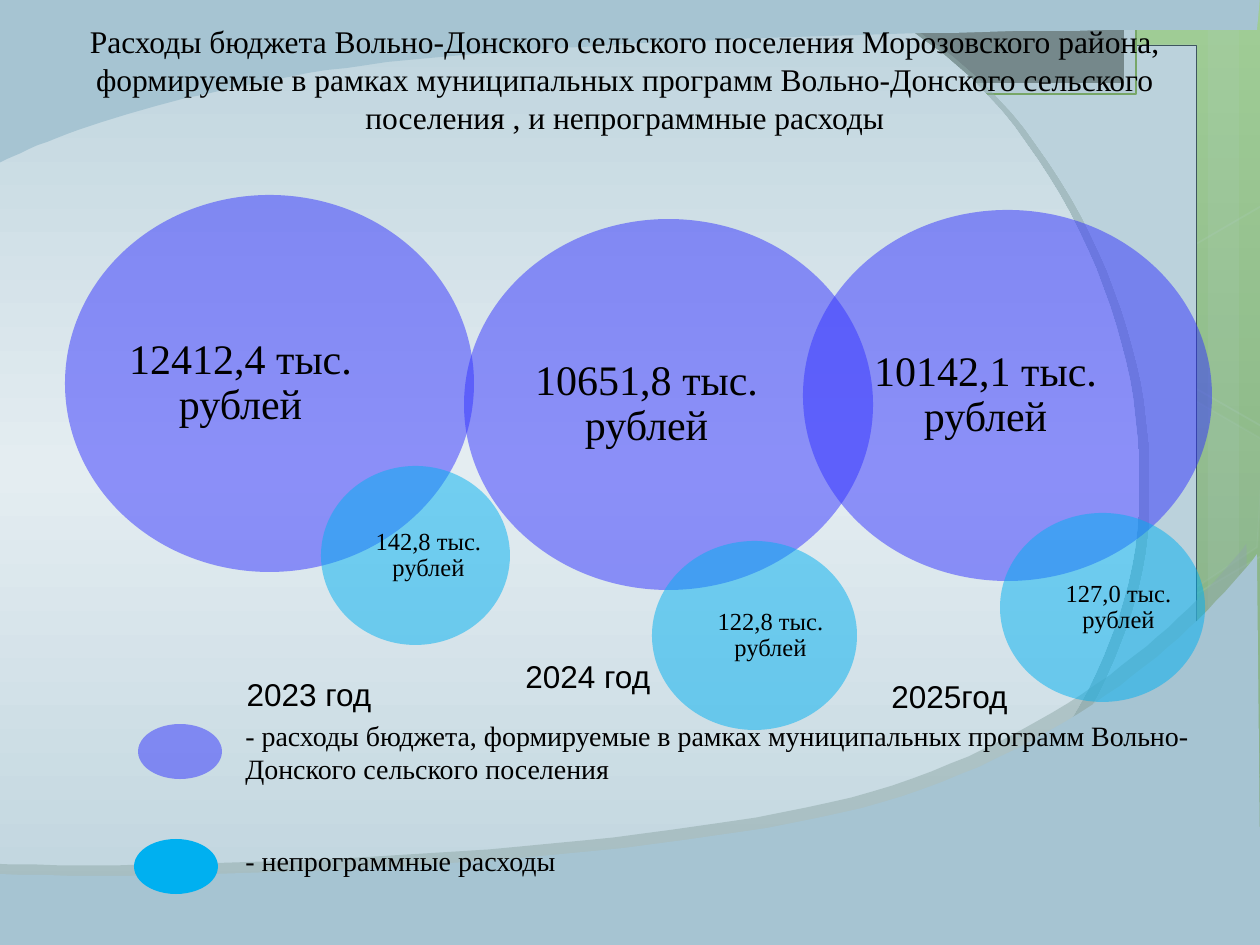
"""Build the slide on programme and non-programme budget spending by year."""
from dataclasses import dataclass
from typing import Optional

from lxml import etree
from pptx import Presentation
from pptx.dml.color import RGBColor
from pptx.enum.shapes import MSO_SHAPE
from pptx.enum.text import MSO_ANCHOR, PP_ALIGN
from pptx.oxml.ns import qn
from pptx.util import Emu, Pt

SCALE = 914400 / 126
WIDTH, HEIGHT = 1260, 945
RECT, OVAL, HEXAGON = MSO_SHAPE.RECTANGLE, MSO_SHAPE.OVAL, MSO_SHAPE.HEXAGON
LEFT, CENTER = PP_ALIGN.LEFT, PP_ALIGN.CENTER
TOP, MIDDLE = MSO_ANCHOR.TOP, MSO_ANCHOR.MIDDLE
SERIF, SANS = "Times New Roman", "Arial"
PROGRAMME, OTHER, BAND = "3333FF", "00B0F0", "A6C4D2"


@dataclass
class Paint:
    fill: Optional[str] = None
    alpha: int = 100
    line: Optional[str] = None
    line_width: float = 1
    line_alpha: int = 100


@dataclass
class Box:
    x: int
    y: int
    w: int
    h: int


@dataclass
class Bubble:
    box: Box
    color: str
    text: str = ""
    size: int = 24
    shift: int = 0
    alpha: int = 50


@dataclass
class Label:
    box: Box
    text: str
    size: int = 18
    font: str = SERIF
    align: PP_ALIGN = LEFT


def px(n: float) -> Emu:
    return Emu(round(n * SCALE))


def rgb(color: str) -> RGBColor:
    return RGBColor.from_string(color)


def set_alpha(parent, percent: int) -> None:
    if percent < 100:
        color = parent.find(qn("a:solidFill"))[0]
        etree.SubElement(color, qn("a:alpha"), val=str(percent * 1000))


def paint(sp, style: Paint) -> None:
    sp.shadow.inherit = False
    if style.fill:
        sp.fill.solid()
        sp.fill.fore_color.rgb = rgb(style.fill)
        set_alpha(sp._element.spPr, style.alpha)
    else:
        sp.fill.background()
    if style.line:
        sp.line.color.rgb = rgb(style.line)
        sp.line.width = Pt(style.line_width)
        set_alpha(sp._element.spPr.find(qn("a:ln")), style.line_alpha)
    else:
        sp.line.fill.background()


def set_gradient(fill, element, stops: list) -> None:
    fill.gradient()
    fill.gradient_angle = 270
    gs_list = next(element.iter(qn("a:gsLst")))
    for gs in list(gs_list):
        gs_list.remove(gs)
    for position, color in stops:
        gs = etree.SubElement(gs_list, qn("a:gs"), pos=str(position * 1000))
        etree.SubElement(gs, qn("a:srgbClr"), val=color)


def add_shadow(sp, distance: float, angle: int) -> None:
    effects = sp._element.spPr.find(qn("a:effectLst"))
    shadow = etree.SubElement(effects, qn("a:outerShdw"), blurRad="0", dist=str(Pt(distance)),
                              dir=str(angle * 60000), algn="ctr", rotWithShape="0")
    color = etree.SubElement(shadow, qn("a:srgbClr"), val="8EA8A7")
    etree.SubElement(color, qn("a:alpha"), val="50000")


def add_preset(s, kind: MSO_SHAPE, box: Box, style: Paint):
    sp = s.shapes.add_shape(kind, px(box.x), px(box.y), px(box.w), px(box.h))
    paint(sp, style)
    return sp


def add_outline(s, points: list, style: Paint):
    builder = s.shapes.build_freeform(*points[0], scale=SCALE)
    builder.add_line_segments(points[1:], close=True)
    sp = builder.convert_to_shape()
    paint(sp, style)
    return sp


def curve(points: list, steps: int = 30) -> list:
    """Sample a chain of cubic Bézier segments."""
    sampled = [points[0]]
    for i in range(0, len(points) - 1, 3):
        a, b, c, d = points[i:i + 4]
        for t in (n / steps for n in range(1, steps + 1)):
            u = 1 - t
            sampled.append(tuple(u**3 * a[k] + 3 * u * u * t * b[k] + 3 * u * t * t * c[k]
                                 + t**3 * d[k] for k in (0, 1)))
    return sampled


def write(sp, text: str, size: int, font: str, align: PP_ALIGN, anchor: MSO_ANCHOR) -> None:
    tf = sp.text_frame
    tf.word_wrap = True
    tf.vertical_anchor = anchor
    p = tf.paragraphs[0]
    p.text = text
    p.alignment = align
    r = p.runs[0]
    r.font.size = Pt(size)
    r.font.name = font
    r.font.color.rgb = rgb("000000")


def add_bubble(s, bubble: Bubble) -> None:
    sp = add_preset(s, OVAL, bubble.box, Paint(bubble.color, bubble.alpha))
    if bubble.text:
        write(sp, bubble.text, bubble.size, SERIF, CENTER, MIDDLE)
        tf = sp.text_frame
        tf.margin_left, tf.margin_right = px(bubble.shift), px(-bubble.shift)
        tf.margin_top = tf.margin_bottom = 0
        tf.paragraphs[0].line_spacing = 0.9


def add_label(s, label: Label) -> None:
    b = label.box
    sp = s.shapes.add_textbox(px(b.x), px(b.y), px(b.w), px(b.h))
    write(sp, label.text, label.size, label.font, label.align, TOP)


def draw_backdrop(s) -> None:
    set_gradient(s.background.fill, s._element, [(0, "C2F35F"), (62, "92BE3F"), (100, "80A33D")])
    for x, w in ((1208, 52), (1134, 105)):
        add_preset(s, RECT, Box(x, 0, w, HEIGHT), Paint("FFFFFF", 10))
    sp = add_preset(s, HEXAGON, Box(1051, 396, 221, 192), Paint("FFFFFF", 7, "FFFFFF", 1, 8))
    sp.rotation = 30
    cut_hexagon = [(1167, 261), (1263, 205), (1273, 212), (1271, 422), (1263, 427), (1167, 372)]
    for dy, fill in ((0, None), (350, "FFFFFF")):
        add_outline(s, [(x, y + dy) for x, y in cut_hexagon], Paint(fill, 4, "FFFFFF", 1, 12))
    add_preset(s, RECT, Box(63, 45, 1134, 853), Paint("FFFFFF", line="000000", line_width=0.5))
    add_preset(s, RECT, Box(629, -3, 507, 97), Paint("F5F5F5", line="74A510", line_width=1.25))
    add_preset(s, RECT, Box(641, -3, 483, 86), Paint("71685A"))
    add_preset(s, RECT, Box(0, 0, WIDTH, HEIGHT), Paint("7AA8BC", 51))

    pale = curve([(854, 0), (1045, 81), (1144, 326), (1139, 483),
                  (1147, 641), (1018, 864), (828, 941)]) + [(-4, 942), (-5, -4)]
    sp = add_outline(s, pale, Paint())
    set_gradient(sp.fill, sp._element, [(0, "BDD3DD"), (50, "E4EDF1"), (100, "BDD3DD")])
    add_shadow(sp, 6.3, 18)
    bottom = curve([(1257, 554), (1205, 622), (1074, 752), (862, 808),
                    (650, 862), (222, 882), (-1, 874)]) + [(-5, 954), (1261, 949)]
    add_shadow(add_outline(s, bottom, Paint(BAND)), 8.5, 225)
    top = curve([(-5, 165), (47, 137), (197, 82), (408, 60),
                 (617, 38), (1033, 28), (1257, 30)]) + [(1260, -3), (-5, -4)]
    add_outline(s, top, Paint(BAND))


BUBBLES = [
    Bubble(Box(464, 219, 409, 371), PROGRAMME, "10651,8 тыс. рублей", 24, -22),
    Bubble(Box(652, 541, 205, 189), OTHER, "122,8 тыс. рублей", 14, 16),
    Bubble(Box(65, 195, 409, 377), PROGRAMME, "12412,4 тыс. рублей", 24, -29),
    Bubble(Box(321, 466, 189, 179), OTHER, "142,8 тыс. рублей", 14, 13),
    Bubble(Box(138, 724, 84, 55), PROGRAMME),
    Bubble(Box(134, 839, 84, 55), OTHER, alpha=100),
    Bubble(Box(803, 210, 409, 371), PROGRAMME, "10142,1 тыс. рублей", 24, -22),
    Bubble(Box(1000, 513, 205, 189), OTHER, "127,0 тыс. рублей", 14, 16),
]
LABELS = [
    Label(Box(54, 16, 1142, 127), "Расходы бюджета Вольно-Донского сельского поселения Морозовского "
          "района, формируемые в рамках муниципальных программ Вольно-Донского сельского "
          "поселения , и непрограммные расходы", align=CENTER),
    Label(Box(233, 712, 973, 81), "- расходы бюджета, формируемые в рамках муниципальных программ "
          "Вольно-Донского сельского поселения", 16),
    Label(Box(233, 837, 853, 47), "- непрограммные расходы", 16),
    Label(Box(147, 669, 324, 50), "2023 год", font=SANS, align=CENTER),
    Label(Box(513, 651, 412, 50), "2024 год", font=SANS),
    Label(Box(879, 671, 412, 50), "2025год", font=SANS),
]


def main() -> None:
    prs = Presentation()
    prs.slide_width, prs.slide_height = px(WIDTH), px(HEIGHT)
    s = prs.slides.add_slide(prs.slide_layouts[6])
    draw_backdrop(s)
    for bubble in BUBBLES:
        add_bubble(s, bubble)
    for label in LABELS:
        add_label(s, label)
    prs.save("out.pptx")


if __name__ == "__main__":
    main()
